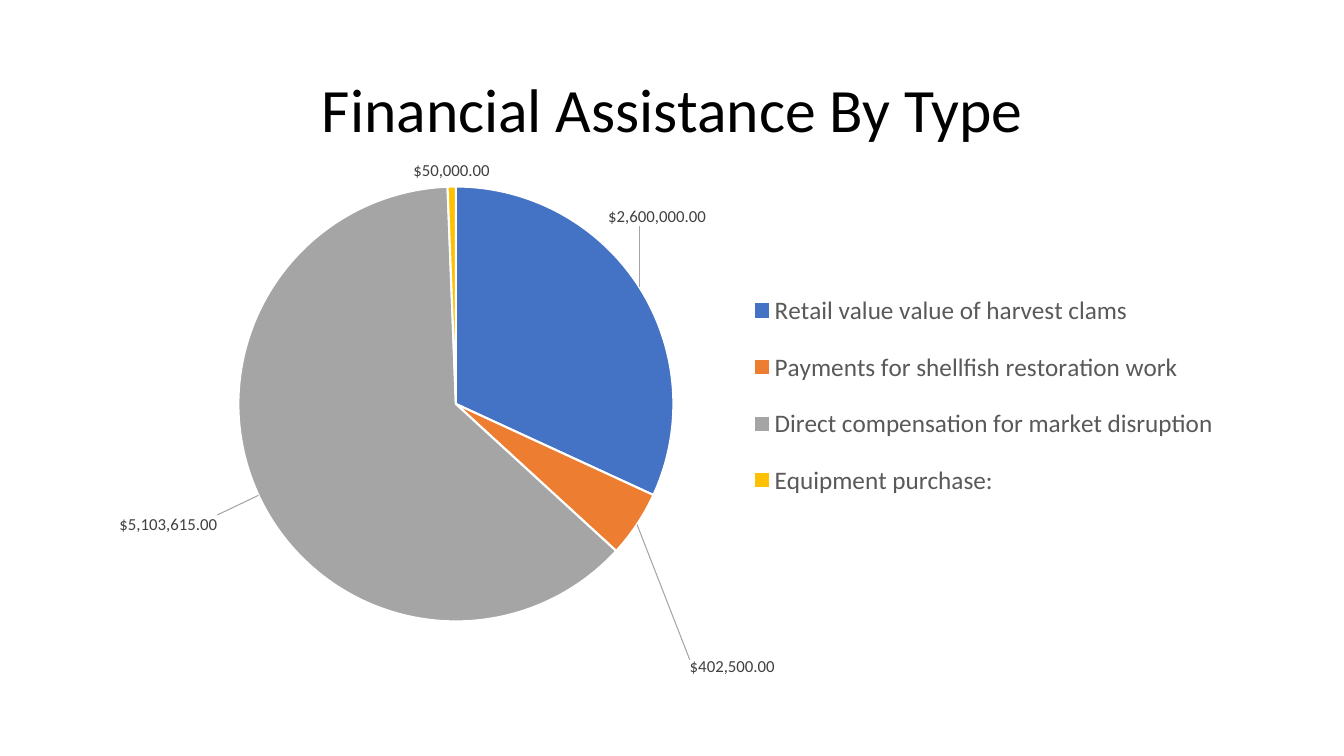
from dataclasses import dataclass
from typing import Optional

from lxml.etree import SubElement
from pptx import Presentation
from pptx.chart.data import CategoryChartData
from pptx.dml.color import RGBColor
from pptx.enum.chart import XL_CHART_TYPE as ChartType
from pptx.enum.chart import XL_LABEL_POSITION as LabelPosition
from pptx.enum.chart import XL_LEGEND_POSITION as LegendPosition
from pptx.enum.text import MSO_ANCHOR as Anchor
from pptx.enum.text import PP_ALIGN as Align
from pptx.oxml import parse_xml
from pptx.oxml.ns import nsdecls, qn
from pptx.util import Inches, Pt

BLACK = RGBColor(0x00, 0x00, 0x00)
WHITE = RGBColor(0xFF, 0xFF, 0xFF)
BLUE = RGBColor(0x44, 0x72, 0xC4)
ORANGE = RGBColor(0xED, 0x7D, 0x31)
GRAY = RGBColor(0xA5, 0xA5, 0xA5)
GOLD = RGBColor(0xFF, 0xC0, 0x00)
LABEL_GRAY = RGBColor(0x40, 0x40, 0x40)
LEGEND_GRAY = RGBColor(0x59, 0x59, 0x59)
FONT = "Calibri"
DOLLARS = '"$"#,##0.00'
WIDTH, HEIGHT = Inches(13.33), Inches(7.5)


@dataclass(frozen=True)
class Area:
    """A rectangle in shares of whatever holds it."""
    left: float
    top: float
    width: float
    height: float


@dataclass(frozen=True)
class Slice:
    name: str
    amount: int
    color: RGBColor
    label_shift: Optional[tuple[float, float]] = None


TITLE_AREA = Area(0.069, 0.053, 0.863, 0.193)
CHART_AREA = Area(0.042, 0.136, 0.89, 0.759)
PIE_AREA = Area(0.152, 0.146, 0.364, 0.758)
LEGEND_AREA = Area(0.57, 0.29, 0.41, 0.44)

SLICES = [
    Slice("Retail value value of harvest clams", 2600000, BLUE, (-0.03, -0.1)),
    Slice("Payments for shellfish restoration work", 402500, ORANGE, (0.04, 0.23)),
    Slice("Direct compensation for market disruption", 5103615, GRAY, (-0.03, 0.03)),
    Slice("Equipment purchase:", 50000, GOLD),
]


def on_slide(area: Area) -> tuple[int, int, int, int]:
    return (int(area.left * WIDTH), int(area.top * HEIGHT),
            int(area.width * WIDTH), int(area.height * HEIGHT))


def style_font(font, size: int, color: RGBColor) -> None:
    font.name = FONT
    font.size = Pt(size)
    font.color.rgb = color


def set_layout(parent, index: int, settings: dict[str, object]) -> None:
    """Give a chart part a manual layout as its child number index."""
    for old in parent.findall(qn("c:layout")):
        parent.remove(old)
    layout = parse_xml(f"<c:layout {nsdecls('c')}><c:manualLayout/></c:layout>")
    for tag, value in settings.items():
        SubElement(layout[0], qn(f"c:{tag}")).set("val", str(value))
    parent.insert(index, layout)


def area_settings(area: Area) -> dict[str, object]:
    return {"xMode": "edge", "yMode": "edge", "x": area.left, "y": area.top,
            "w": area.width, "h": area.height}


def add_title(page, text: str) -> None:
    title = page.shapes.title
    title.left, title.top, title.width, title.height = on_slide(TITLE_AREA)
    title.text_frame.vertical_anchor = Anchor.MIDDLE
    para = title.text_frame.paragraphs[0]
    para.alignment = Align.CENTER
    para.line_spacing = 0.9
    span = para.add_run()
    span.text = text
    style_font(span.font, 44, BLACK)


def style_slice(series, index: int, part: Slice) -> None:
    point = series.points[index]
    point.format.fill.solid()
    point.format.fill.fore_color.rgb = part.color
    point.format.line.color.rgb = WHITE
    point.format.line.width = Pt(1.5)
    if part.label_shift:
        label = point.data_label
        style_font(label.font, 12, LABEL_GRAY)
        label.position = LabelPosition.OUTSIDE_END
        shift_x, shift_y = part.label_shift
        element = series.data_labels._element.findall(qn("c:dLbl"))[-1]
        set_layout(element, 1, {"x": shift_x, "y": shift_y})


def add_pie(page) -> None:
    data = CategoryChartData(number_format=DOLLARS)
    data.categories = [part.name for part in SLICES]
    data.add_series("Series 1", [part.amount for part in SLICES])
    chart = page.shapes.add_chart(ChartType.PIE, *on_slide(CHART_AREA), data).chart
    chart.has_title = False
    style_font(chart.font, 10, BLACK)
    plot = chart.plots[0]
    plot.vary_by_categories = True
    plot_area = chart._chartSpace.chart.plotArea
    set_layout(plot_area, 0, {"layoutTarget": "inner", **area_settings(PIE_AREA)})

    # Value labels with leader lines
    series = plot.series[0]
    labels = series.data_labels
    labels.show_value = True
    labels.number_format = DOLLARS
    labels.number_format_is_linked = False
    labels.position = LabelPosition.OUTSIDE_END
    style_font(labels.font, 12, LABEL_GRAY)
    for index, part in enumerate(SLICES):
        style_slice(series, index, part)
    for tag in ("c:showLeaderLines", "c:leaderLines"):
        for old in labels._element.findall(qn(tag)):
            labels._element.remove(old)
    SubElement(labels._element, qn("c:showLeaderLines")).set("val", "1")
    labels._element.append(parse_xml(
        f'<c:leaderLines {nsdecls("c", "a")}><c:spPr><a:ln w="9525"><a:solidFill>'
        f'<a:srgbClr val="{GRAY}"/></a:solidFill></a:ln></c:spPr></c:leaderLines>'))

    # Legend
    chart.has_legend = True
    legend = chart.legend
    legend.position = LegendPosition.RIGHT
    legend.include_in_layout = False
    style_font(legend.font, 18, LEGEND_GRAY)
    set_layout(legend._element, 1, area_settings(LEGEND_AREA))


def main() -> None:
    deck = Presentation()
    deck.slide_width, deck.slide_height = WIDTH, HEIGHT
    page = deck.slides.add_slide(deck.slide_layouts.get_by_name("Title Only"))
    add_title(page, "Financial Assistance By Type")
    add_pie(page)
    deck.save("out.pptx")


if __name__ == "__main__":
    main()
